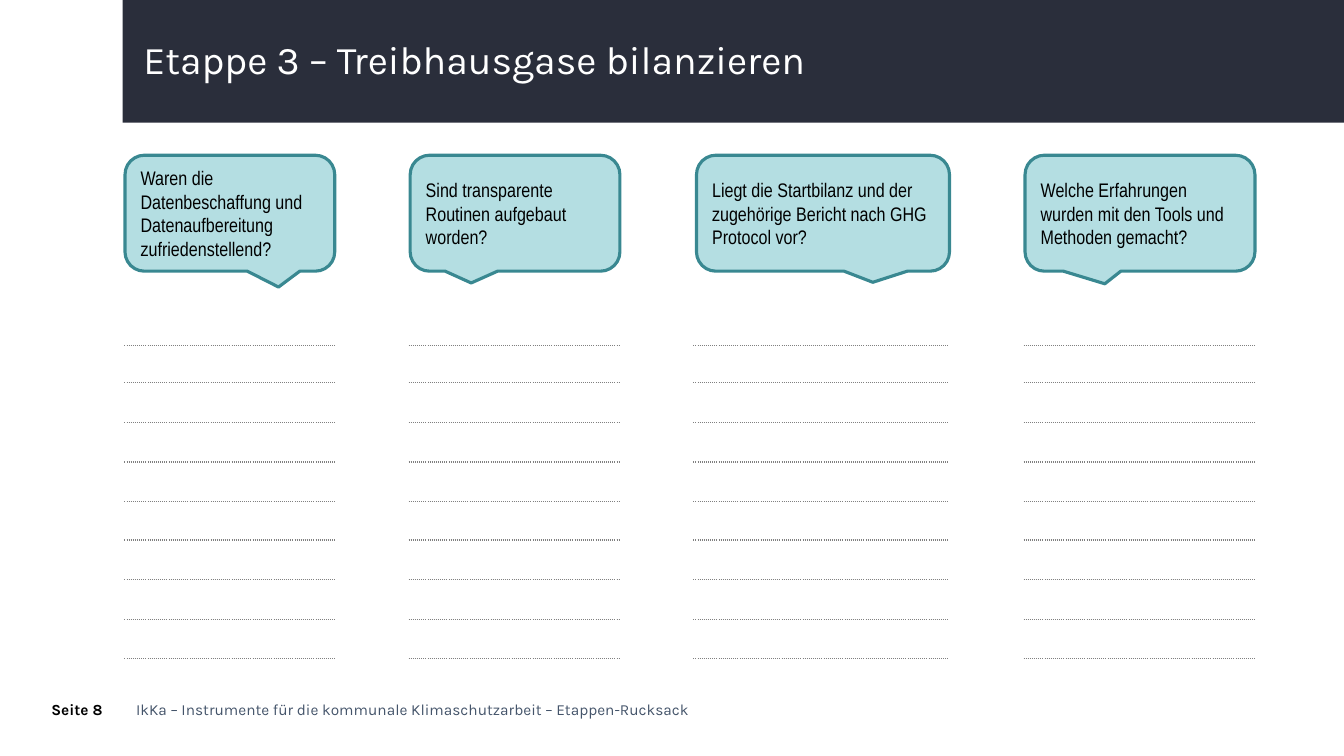
from lxml.etree import SubElement
from pptx import Presentation
from pptx.dml.color import RGBColor
from pptx.enum.shapes import MSO_SHAPE
from pptx.enum.text import MSO_ANCHOR
from pptx.oxml.ns import qn
from pptx.util import Pt

TITLE = "Etappe 3 – Treibhausgase bilanzieren"
PAGE = "Seite 8"
FOOTER = "IkKa – Instrumente für die kommunale Klimaschutzarbeit – Etappen-Rucksack"
COLUMNS = [
    dict(text="Waren die Datenbeschaffung und Datenaufbereitung zufriedenstellend?",
         bubble=(89.3, 149.8), lines=(89.3, 149.8), tip=(0.232, 0.637)),
    dict(text="Sind transparente Routinen aufgebaut worden?",
         bubble=(293, 149.8), lines=(292.3, 149.8), tip=(-0.209, 0.602)),
    dict(text="Liegt die Startbilanz und der zugehörige Bericht nach GHG Protocol vor?",
         bubble=(497.5, 180.7), lines=(495.7, 180.7), tip=(0.197, 0.596)),
    dict(text="Welche Erfahrungen wurden mit den Tools und Methoden gemacht?",
         bubble=(732.2, 164.2), lines=(731.5, 165.6), tip=(-0.153, 0.609)),
]
ROWS = [26.6, 26.6, 28.3, 28.3, 28.3, 27.4, 28.3, 28.3, 28.3]
BUBBLE_TOP, BUBBLE_H, LINES_TOP = 110.9, 82.8, 220.3
COLORS = dict(band="2A2E3B", white="FFFFFF", black="000000", footer="44546A",
              bubble="B4DEE2", outline="398891", rule="808080")


def rgb(name):
    return RGBColor.from_string(COLORS[name])


def write(tf, text, size, color, font="Karla", bold=False, spacing=None, inset=None,
          anchor=MSO_ANCHOR.TOP):
    tf.word_wrap = True
    tf.vertical_anchor = anchor
    if inset is not None:
        tf.margin_left = tf.margin_right = tf.margin_top = tf.margin_bottom = Pt(inset)
    p = tf.paragraphs[0]
    p.line_spacing = spacing
    r = p.add_run()
    r.text = text
    r.font.name, r.font.size, r.font.bold = font, Pt(size), bold
    r.font.color.rgb = rgb(color)


def add_text(s, box, text, **fmt):
    write(s.shapes.add_textbox(*map(Pt, box)).text_frame, text, **fmt)


def add_panel(s, kind, box, fill, line=None):
    sp = s.shapes.add_shape(kind, *map(Pt, box))
    sp.shadow.inherit = False
    sp.fill.solid()
    sp.fill.fore_color.rgb = rgb(fill)
    if line:
        sp.line.color.rgb = rgb(line)
        sp.line.width = Pt(2.25)
    else:
        sp.line.fill.background()
    return sp


def add_bubble(s, col):
    left, width = col["bubble"]
    sp = add_panel(s, MSO_SHAPE.ROUNDED_RECTANGULAR_CALLOUT,
                   (left, BUBBLE_TOP, width, BUBBLE_H), "bubble", "outline")
    for i, value in enumerate((*col["tip"], 0.167)):
        sp.adjustments[i] = value
    write(sp.text_frame, col["text"], size=14, color="black", font="Arial Narrow",
          anchor=MSO_ANCHOR.MIDDLE)
    sp.text_frame.paragraphs[0].alignment = 1


def add_border(cell, side):
    ln = SubElement(cell._tc.get_or_add_tcPr(), qn("a:" + side), w=str(Pt(1)))
    fill = SubElement(ln, qn("a:solidFill"))
    SubElement(fill, qn("a:srgbClr"), val=COLORS["rule"])
    SubElement(ln, qn("a:prstDash"), val="sysDot")


def add_lines(s, col):
    left, width = col["lines"]
    tbl = s.shapes.add_table(len(ROWS), 1, Pt(left), Pt(LINES_TOP), Pt(width),
                             Pt(sum(ROWS))).table
    tbl.first_row = tbl.horz_banding = False
    for i, height in enumerate(ROWS):
        tbl.rows[i].height = Pt(height)
        cell = tbl.cell(i, 0)
        cell.margin_top = cell.margin_bottom = 0
        if i:
            add_border(cell, "lnT")
        add_border(cell, "lnB")
        cell.fill.background()


def main():
    prs = Presentation()
    prs.slide_width, prs.slide_height = Pt(960), Pt(540)
    s = prs.slides.add_slide(prs.slide_layouts[6])
    add_panel(s, MSO_SHAPE.RECTANGLE, (87.6, 0, 872.4, 87.6), "band")
    add_text(s, (95.3, 25.2, 828, 43.9), TITLE, size=28, color="white", spacing=0.9)
    add_text(s, (97.2, 500.4, 401, 13.7), FOOTER, size=11, color="footer", inset=0)
    add_text(s, (36.7, 500.4, 52.6, 17.3), PAGE, size=11, color="black", bold=True, inset=0)
    for col in COLUMNS:
        add_bubble(s, col)
        add_lines(s, col)
    prs.save("out.pptx")


if __name__ == "__main__":
    main()
